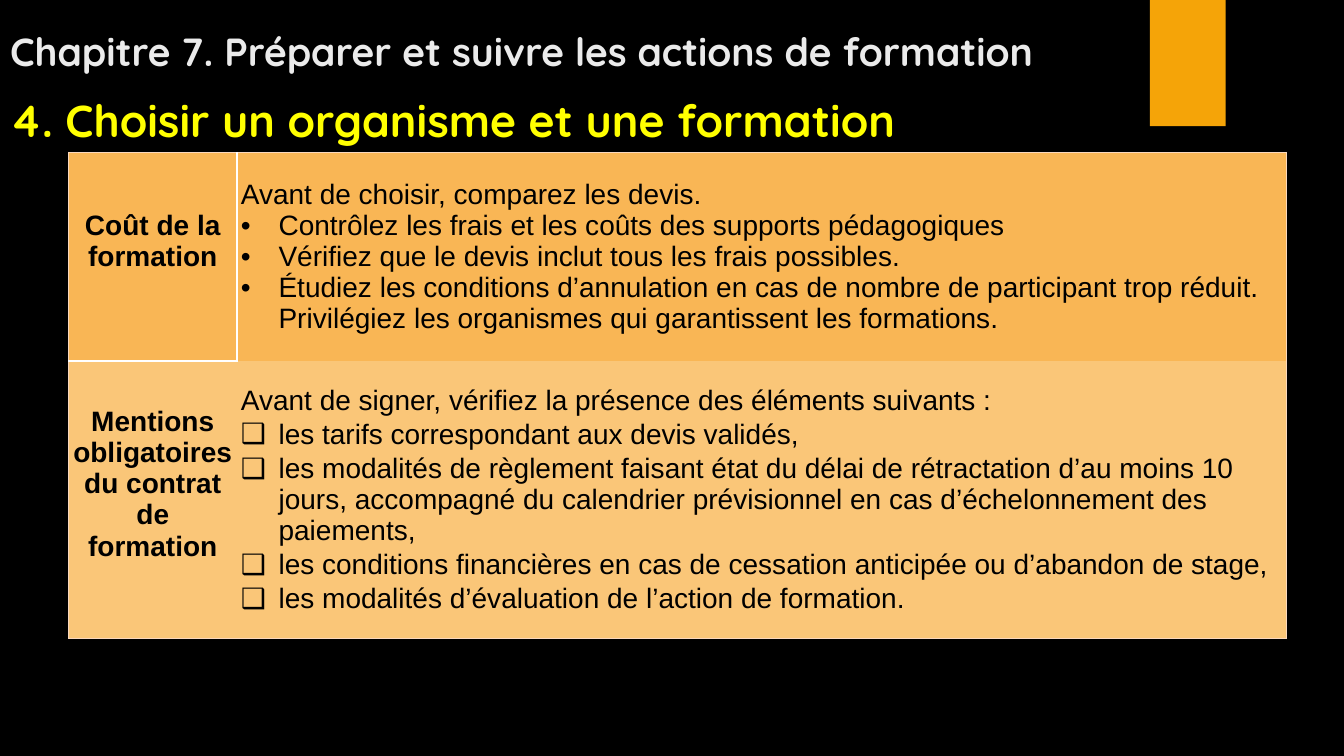
from pptx import Presentation
from pptx import util as u
from pptx.dml import color
from pptx.enum import shapes, text
from pptx.oxml import xmlchemy
from pptx.oxml.ns import qn
from lxml import etree

Cm, Pt = u.Cm, u.Pt

COLORS = {
    "background": "000000",
    "accent": "F5A408",
    "title": "EBEBEB",
    "section": "FFFF00",
    "text": "000000",
    "cost": "F9B655",
    "contract": "FAC678",
    "frame": "FAD8BD",
    "rule": "FFFFFF",
}
FRAME = ("frame", 0.75)
COLUMN_RULE = ("rule", 1.5)
ROW_RULE = ("rule", 2.25)
HANGING = Cm(0.95)
LABEL_OFFSET = Cm(0.79)  # raises the row labels by half a line

ROWS = [
    {
        "label": "Coût de la formation",
        "intro": "Avant de choisir, comparez les devis.",
        "items": [
            "Contrôlez les frais et les coûts des supports pédagogiques",
            "Vérifiez que le devis inclut tous les frais possibles.",
            "Étudiez les conditions d’annulation en cas de nombre de participant "
            "trop réduit. Privilégiez les organismes qui garantissent les formations.",
        ],
        "bullet": "•", "gap": 0, "fill": "cost", "height": Cm(5.26),
        "borders": [
            {"L": FRAME, "R": COLUMN_RULE, "T": FRAME, "B": ROW_RULE},
            {"L": COLUMN_RULE, "R": FRAME, "T": FRAME},
        ],
    },
    {
        "label": "Mentions obligatoires du contrat de formation",
        "intro": "Avant de signer, vérifiez la présence des éléments suivants :",
        "items": [
            "les tarifs correspondant aux devis validés,",
            "les modalités de règlement faisant état du délai de rétractation d’au "
            "moins 10 jours, accompagné du calendrier prévisionnel en cas "
            "d’échelonnement des paiements,",
            "les conditions financières en cas de cessation anticipée ou d’abandon "
            "de stage,",
            "les modalités d’évaluation de l’action de formation.",
        ],
        "bullet": "❑", "gap": 2, "fill": "contract", "height": Cm(6.98),
        "borders": [
            {"L": FRAME, "T": ROW_RULE, "B": FRAME},
            {"R": FRAME, "B": FRAME},
        ],
    },
]


def rgb(name):
    return color.RGBColor.from_string(COLORS[name])


def set_attributes(target, **values):
    for name, value in values.items():
        setattr(target, name, value)


def add_run(p, content, color_name, **font):
    r = p.add_run()
    r.text = content
    set_attributes(r.font, **font)
    r.font.color.rgb = rgb(color_name)


def place_heading(sp, content, top, size, color_name):
    set_attributes(sp, left=0, top=top, width=Cm(32.77), height=Cm(1.8))
    tf = sp.text_frame
    set_attributes(tf, word_wrap=True, auto_size=text.MSO_AUTO_SIZE.NONE,
                   vertical_anchor=text.MSO_ANCHOR.BOTTOM)
    p = tf.paragraphs[0]
    set_attributes(p, alignment=text.PP_ALIGN.LEFT, space_before=Pt(0))
    add_run(p, content, color_name, name="Quicksand", size=Pt(size), bold=True)


def add_ribbon(s):
    sp = s.shapes.add_shape(shapes.MSO_SHAPE.RECTANGLE,
                            Cm(28.98), 0, Cm(1.91), Cm(3.18))
    sp.shadow.inherit = False
    sp.fill.solid()
    sp.fill.fore_color.rgb = rgb("accent")
    sp.line.fill.background()


def set_bullet(p, mark):
    pPr = p._p.get_or_add_pPr()
    pPr.set("marL", str(HANGING))
    pPr.set("indent", str(-HANGING))
    etree.SubElement(pPr, qn("a:buFont")).set("typeface", "Arial")
    etree.SubElement(pPr, qn("a:buChar")).set("char", mark)


def set_borders(cell, borders):
    tcPr = cell._tc.get_or_add_tcPr()
    for side in "LRTB":
        ln = etree.SubElement(tcPr, qn(f"a:ln{side}"))
        if side not in borders:
            etree.SubElement(ln, qn("a:noFill"))
            continue
        name, width = borders[side]
        ln.set("w", str(Pt(width)))
        solid = etree.SubElement(ln, qn("a:solidFill"))
        etree.SubElement(solid, qn("a:srgbClr")).set("val", COLORS[name])


def format_cell(cell, borders, fill):
    set_borders(cell, borders)
    cell.fill.solid()
    cell.fill.fore_color.rgb = rgb(fill)
    set_attributes(cell, vertical_anchor=text.MSO_ANCHOR.MIDDLE,
                   margin_left=Cm(0.1), margin_right=Cm(0.1),
                   margin_top=0, margin_bottom=0)


def fill_row(row, content):
    for cell, borders in zip(row.cells, content["borders"]):
        format_cell(cell, borders, content["fill"])
    row.height = content["height"]
    label, advice = row.cells
    font = {"name": "Arial", "size": Pt(20)}

    # Row label
    label.margin_bottom = LABEL_OFFSET
    p = label.text_frame.paragraphs[0]
    p.alignment = text.PP_ALIGN.CENTER
    add_run(p, content["label"], "text", bold=True, **font)

    # Introduction and list
    tf = advice.text_frame
    for i, line in enumerate([content["intro"], *content["items"]]):
        p = tf.add_paragraph() if i else tf.paragraphs[0]
        if i:
            set_bullet(p, content["bullet"])
        p.space_after = Pt(content["gap"])
        add_run(p, line, "text", bold=False, **font)


def add_advice_table(s):
    height = sum(row["height"] for row in ROWS)
    table = s.shapes.add_table(len(ROWS), 2, Cm(1.73), Cm(3.84),
                               Cm(30.68), height).table
    set_attributes(table, first_row=False, horz_banding=False)
    for column, width in zip(table.columns, (Cm(4.24), Cm(26.44))):
        column.width = width
    for row, content in zip(table.rows, ROWS):
        fill_row(row, content)


def main():
    prs = Presentation()
    set_attributes(prs, slide_width=Cm(33.87), slide_height=Cm(19.05))
    s = prs.slides.add_slide(prs.slide_layouts[0])
    s.background.fill.solid()
    s.background.fill.fore_color.rgb = rgb("background")

    # Decoration, headings, table
    add_ribbon(s)
    place_heading(s.shapes.title, "Chapitre 7. Préparer et suivre les actions de formation",
                  Cm(0.2), 28, "title")
    place_heading(s.placeholders[1], "4. Choisir un organisme et une formation",
                  Cm(2.03), 32, "section")
    add_advice_table(s)
    prs.save("out.pptx")


if __name__ == "__main__":
    main()
